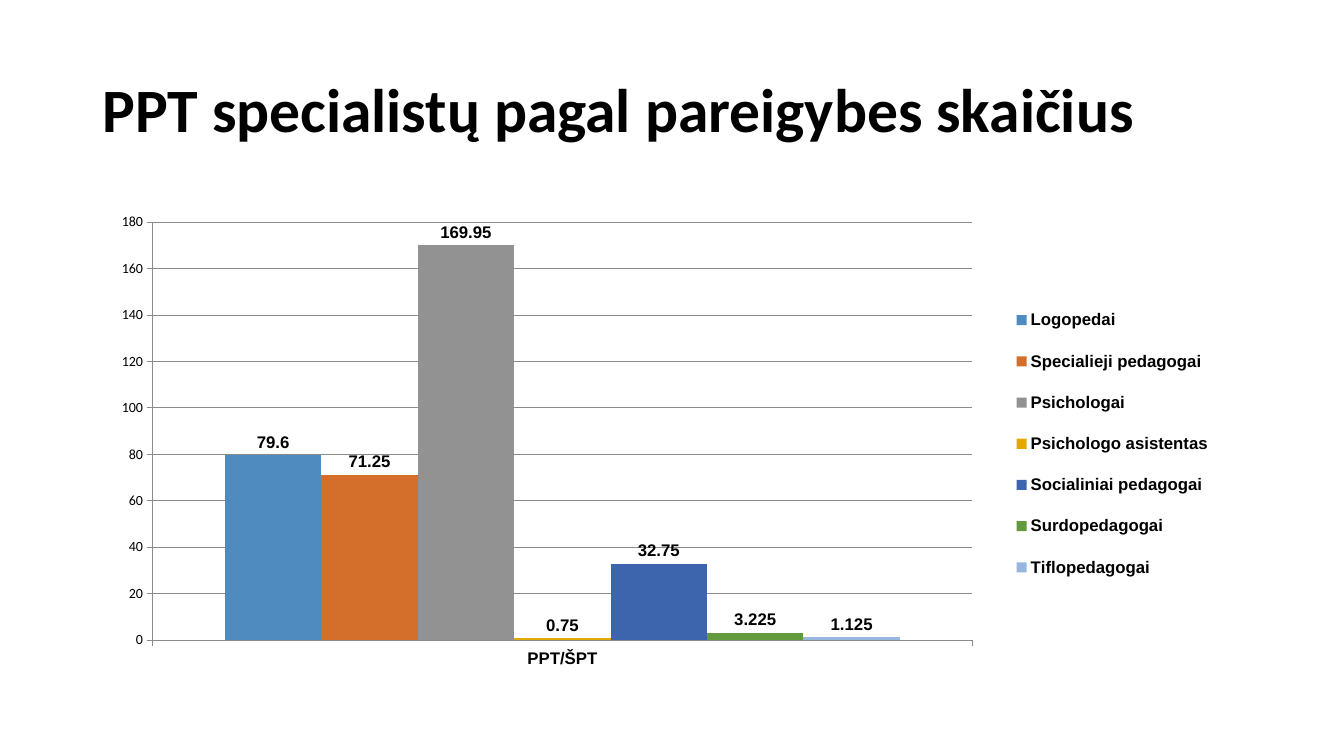
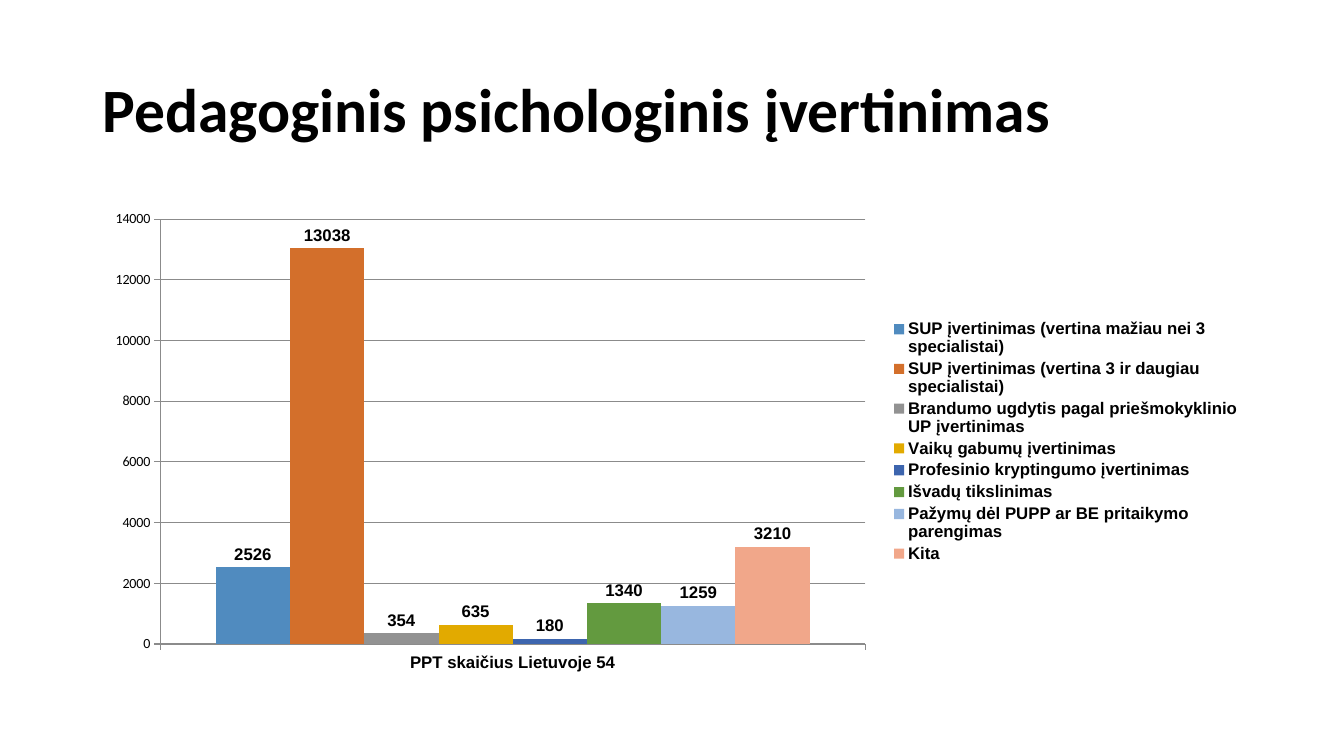
"""Build two slides, each with a title and a clustered column chart."""
from pptx import Presentation
from pptx.chart.data import CategoryChartData as ChartData
from pptx.dml.color import RGBColor as Color
from pptx.enum.chart import XL_CHART_TYPE as ChartType
from pptx.enum.chart import XL_LABEL_POSITION as LabelPosition
from pptx.enum.chart import XL_LEGEND_POSITION as LegendPosition
from pptx.enum.chart import XL_TICK_MARK as TickMark
from pptx.enum.text import MSO_ANCHOR as Anchor
from pptx.oxml.xmlchemy import OxmlElement
from pptx.util import Emu, Pt

PX = 9525
COLORS = {
    "text": "000000", "line": "8B8B8B",
    "blue": "508BBF", "orange": "D36F2B", "gray": "929292",
    "gold": "E2AA00", "navy": "3D65AE", "green": "639A3F",
    "sky": "98B7DF", "salmon": "F1A78A",
}
SERIES_COLORS = ["blue", "orange", "gray", "gold", "navy", "green", "sky", "salmon"]
TITLE_AREA = (88, 38, 1104, 139)
CHART_AREA = (88, 192, 1104, 457)

STAFF = {
    "Logopedai": 79.6,
    "Specialieji pedagogai": 71.25,
    "Psichologai": 169.95,
    "Psichologo asistentas": 0.75,
    "Socialiniai pedagogai": 32.75,
    "Surdopedagogai": 3.225,
    "Tiflopedagogai": 1.125,
}
ASSESSMENTS = {
    "SUP įvertinimas (vertina mažiau nei 3 specialistai)": 2526,
    "SUP įvertinimas (vertina 3 ir daugiau specialistai)": 13038,
    "Brandumo ugdytis pagal priešmokyklinio UP įvertinimas": 354,
    "Vaikų gabumų įvertinimas": 635,
    "Profesinio kryptingumo įvertinimas": 180,
    "Išvadų tikslinimas": 1340,
    "Pažymų dėl PUPP ar BE pritaikymo parengimas": 1259,
    "Kita": 3210,
}


def px(*lengths):
    return [Emu(length * PX) for length in lengths]


def color(name):
    return Color.from_string(COLORS[name])


def style_font(font, size=12, name="Arial", bold=True):
    font.size, font.name, font.bold = Pt(size), name, bold
    font.color.rgb = color("text")


def style_line(line):
    line.color.rgb = color("line")
    line.width = Pt(0.75)


def add_text(page, text, area, **font_format):
    box = page.shapes.add_textbox(*px(*area))
    frame = box.text_frame
    frame.word_wrap = True
    frame.vertical_anchor = Anchor.MIDDLE
    para = frame.paragraphs[0]
    para.line_spacing = 0.9
    span = para.add_run()
    span.text = text
    style_font(span.font, **font_format)


def set_layout(parent, index, bounds, inner=False):
    for old in parent.xpath("c:layout"):
        parent.remove(old)
    layout = OxmlElement("c:layout")
    manual = OxmlElement("c:manualLayout")
    settings = [("layoutTarget", "inner")] if inner else []
    settings += [("xMode", "edge"), ("yMode", "edge"), *zip("xywh", bounds)]
    for tag, value in settings:
        setting = OxmlElement(f"c:{tag}")
        setting.set("val", str(value))
        manual.append(setting)
    layout.append(manual)
    parent.insert(index, layout)


def style_axes(chart):
    for axis in (chart.category_axis, chart.value_axis):
        axis.major_tick_mark = TickMark.OUTSIDE
        axis.minor_tick_mark = TickMark.NONE
        style_line(axis.format.line)
    style_font(chart.category_axis.tick_labels.font)
    chart.value_axis.has_major_gridlines = True
    style_line(chart.value_axis.major_gridlines.format.line)


def style_series(series, color_name):
    series.format.fill.solid()
    series.format.fill.fore_color.rgb = color(color_name)
    series.invert_if_negative = False
    labels = series.data_labels
    labels.show_value = True
    labels.position = LabelPosition.OUTSIDE_END
    style_font(labels.font)


def add_columns(page, category, values):
    data = ChartData()
    data.categories = [category]
    for name, value in values.items():
        data.add_series(name, [value])
    chart = page.shapes.add_chart(ChartType.COLUMN_CLUSTERED, *px(*CHART_AREA), data).chart
    chart.has_title = False
    style_font(chart.font, size=10, name="Calibri", bold=False)
    chart.has_legend = True
    chart.legend.position = LegendPosition.RIGHT
    chart.legend.include_in_layout = False
    style_font(chart.legend.font)
    style_axes(chart)
    plot = chart.plots[0]
    plot.gap_width = 150
    plot.vary_by_categories = False
    for series, color_name in zip(plot.series, SERIES_COLORS):
        style_series(series, color_name)
    return chart


def add_page(deck, title, category, values):
    page = deck.slides.add_slide(deck.slide_layouts[6])
    add_text(page, title, TITLE_AREA, size=44, name="Calibri")
    return add_columns(page, category, values)


def main():
    deck = Presentation()
    deck.slide_width, deck.slide_height = px(1280, 720)
    chart = add_page(deck, "PPT specialistų pagal pareigybes skaičius", "PPT/ŠPT", STAFF)
    set_layout(chart.element.xpath(".//c:plotArea")[0], 0, (0.052, 0.043, 0.707, 0.871), inner=True)
    set_layout(chart.element.xpath(".//c:legend")[0], 1, (0.78, 0.18, 0.2, 0.65))
    add_page(deck, "Pedagoginis psichologinis įvertinimas", "PPT skaičius Lietuvoje 54", ASSESSMENTS)
    deck.save("out.pptx")


if __name__ == "__main__":
    main()
